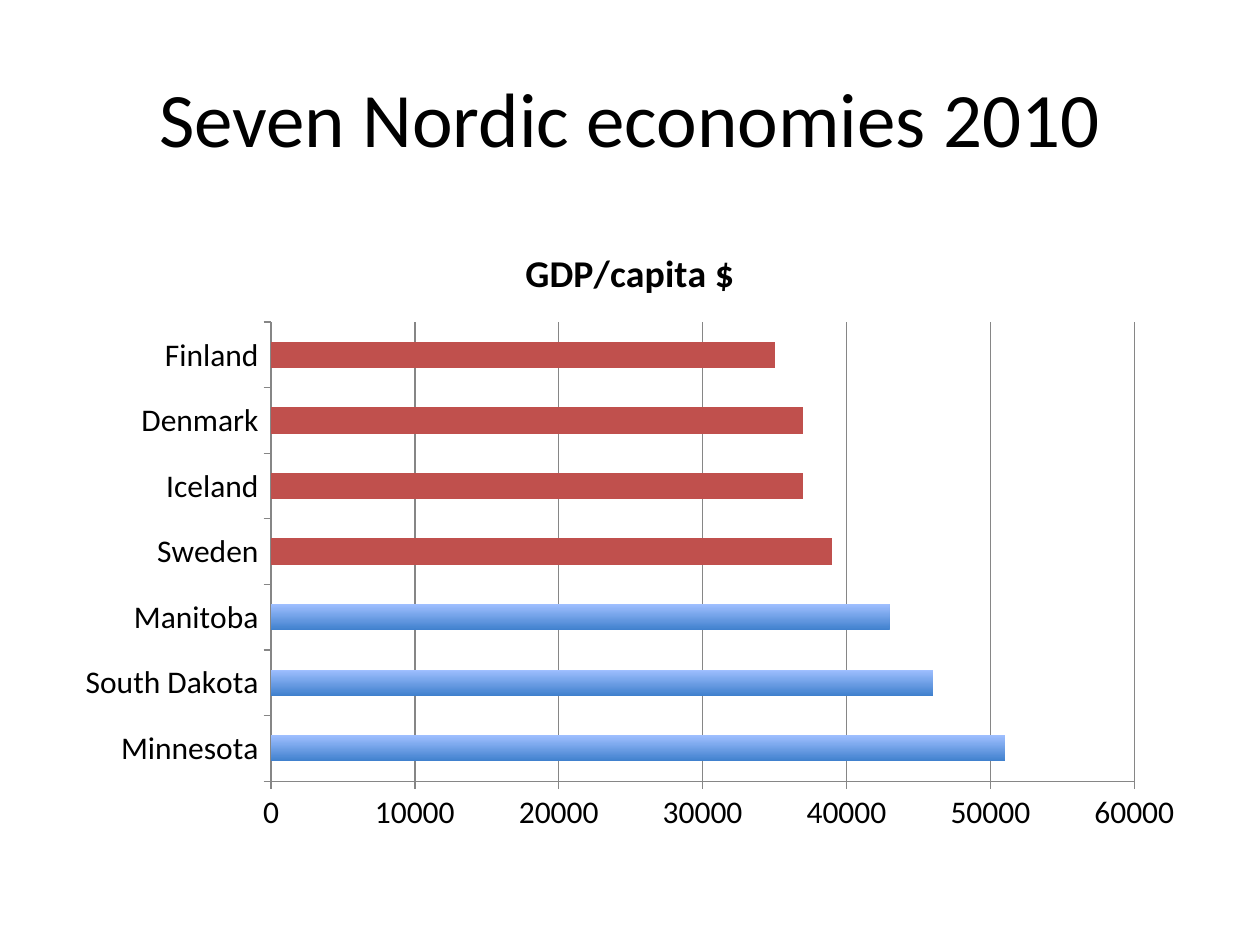
import pptx
import pptx.util
import pptx.dml.color
import pptx.chart.data
import pptx.enum.chart
import pptx.enum.text
from pptx.util import Inches

TITLE = "Seven Nordic economies 2010"
CHART_TITLE = "GDP/capita $"
FONT = "Calibri"
BLACK, GREY, BLUE, RED = "000000", "868686", "4F81BD", "C0504D"
BLUE_BOTTOM, BLUE_TOP = "3F80CD", "9FBFFF"
ECONOMIES = [
    ("Minnesota", 51000, False),
    ("South Dakota", 46000, False),
    ("Manitoba", 43000, False),
    ("Sweden", 39000, True),
    ("Iceland", 37000, True),
    ("Denmark", 37000, True),
    ("Finland", 35000, True),
]


def color(value):
    return pptx.dml.color.RGBColor.from_string(value)


def style_font(font, size, bold=False):
    font.name = FONT
    font.size = pptx.util.Pt(size)
    font.bold = bold
    font.color.rgb = color(BLACK)


def style_line(line):
    line.color.rgb = color(GREY)
    line.width = pptx.util.Pt(0.75)


def add_title(page):
    box = page.shapes.add_textbox(Inches(0.5), Inches(0.3), Inches(9), Inches(1.25))
    frame = box.text_frame
    frame.word_wrap = True
    frame.vertical_anchor = pptx.enum.text.MSO_ANCHOR.MIDDLE
    frame.text = TITLE
    para = frame.paragraphs[0]
    para.alignment = pptx.enum.text.PP_ALIGN.CENTER
    style_font(para.runs[0].font, 44)


def add_gdp_chart(page):
    data = pptx.chart.data.CategoryChartData()
    data.categories = [name for name, gdp, nordic in ECONOMIES]
    data.add_series("Series 1", [gdp for name, gdp, nordic in ECONOMIES])
    chart = page.shapes.add_chart(
        pptx.enum.chart.XL_CHART_TYPE.BAR_CLUSTERED,
        Inches(0.5), Inches(1.75), Inches(9), Inches(4.95), data,
    ).chart
    style_font(chart.font, 18)
    chart.has_legend = False
    chart.has_title = True
    heading = chart.chart_title.text_frame
    heading.text = CHART_TITLE
    style_font(heading.paragraphs[0].runs[0].font, 21.6, True)

    for axis in (chart.category_axis, chart.value_axis):
        axis.major_tick_mark = pptx.enum.chart.XL_TICK_MARK.OUTSIDE
        style_line(axis.format.line)
    chart.category_axis.has_major_gridlines = False
    values = chart.value_axis
    values.minimum_scale, values.maximum_scale, values.major_unit = 0, 60000, 10000
    values.has_major_gridlines = True
    style_line(values.major_gridlines.format.line)
    values.tick_labels.number_format = "General"
    values.tick_labels.number_format_is_linked = False

    plot = chart.plots[0]
    plot.gap_width = 150
    plot.vary_by_categories = False
    series = plot.series[0]
    series.format.fill.solid()
    series.format.fill.fore_color.rgb = color(BLUE)
    for index, (name, gdp, nordic) in enumerate(ECONOMIES):
        fill = series.points[index].format.fill
        if nordic:
            fill.solid()
            fill.fore_color.rgb = color(RED)
        else:
            fill.gradient()
            fill.gradient_angle = 90
            for stop, shade in zip(fill.gradient_stops, (BLUE_BOTTOM, BLUE_TOP)):
                stop.color.rgb = color(shade)


def main():
    deck = pptx.Presentation()
    deck.slide_width, deck.slide_height = Inches(10), Inches(7.5)
    page = deck.slides.add_slide(deck.slide_layouts[6])
    add_title(page)
    add_gdp_chart(page)
    deck.save("out.pptx")


if __name__ == "__main__":
    main()
